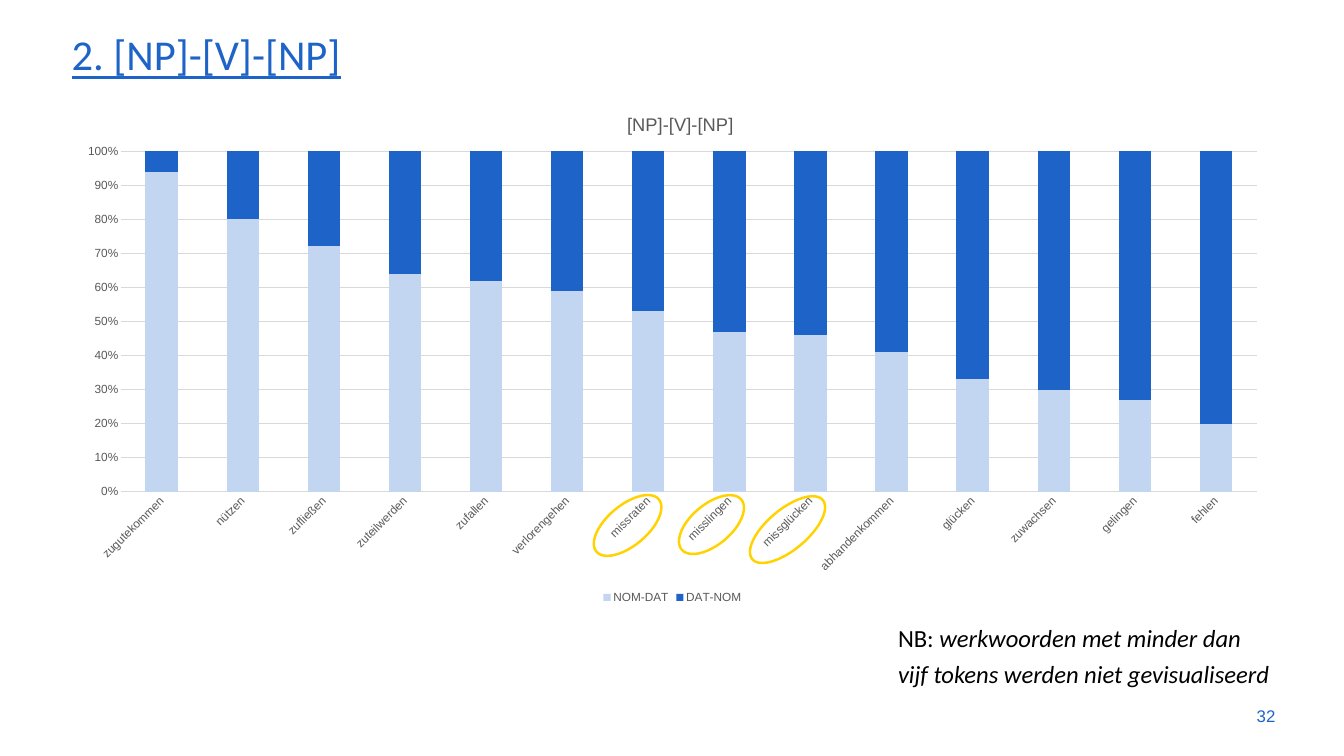
"""Build the slide on case order in the [NP]-[V]-[NP] pattern."""
from dataclasses import dataclass

from lxml.etree import SubElement
from pptx import Presentation
from pptx.chart.data import CategoryChartData
from pptx.dml.color import RGBColor
from pptx.enum.chart import XL_CHART_TYPE as ChartType
from pptx.enum.chart import XL_LEGEND_POSITION as LegendPosition
from pptx.enum.chart import XL_TICK_MARK as TickMark
from pptx.enum.shapes import MSO_SHAPE as Preset
from pptx.enum.text import MSO_ANCHOR as Anchor
from pptx.enum.text import MSO_AUTO_SIZE as AutoSize
from pptx.enum.text import PP_ALIGN as Align
from pptx.oxml import parse_xml
from pptx.oxml.ns import nsdecls, qn
from pptx.util import Cm, Pt


@dataclass(frozen=True)
class Theme:
    blue: RGBColor = RGBColor(0x1E, 0x64, 0xC8)
    pale: RGBColor = RGBColor(0xC2, 0xD5, 0xF1)
    yellow: RGBColor = RGBColor(0xFF, 0xD2, 0x00)
    black: RGBColor = RGBColor(0, 0, 0)
    gray: RGBColor = RGBColor(0x59, 0x59, 0x59)
    grid: RGBColor = RGBColor(0xD9, 0xD9, 0xD9)
    heading: Pt = Pt(54)
    note: Pt = Pt(25)
    chart_title: Pt = Pt(18.6)
    number: Pt = Pt(17.1)
    label: Pt = Pt(12)


theme = Theme()


def style_font(font, color, **values):
    for name, value in values.items():
        setattr(font, name, value)
    font.color.rgb = color


def set_layout(element, **fractions):
    for old in element.findall(qn("c:layout")):
        element.remove(old)
    layout = parse_xml(f"<c:layout {nsdecls('c')}/>")
    manual = SubElement(layout, qn("c:manualLayout"))
    for name, value in fractions.items():
        SubElement(manual, qn(f"c:{name}")).set("val", str(value))
    text = element.find(qn("c:tx"))
    element.insert(0 if text is None else 1, layout)


deck = Presentation()
deck.slide_width, deck.slide_height = Cm(48.16), Cm(27.1)
page = deck.slides.add_slide(deck.slide_layouts[5])

title = page.shapes.title
title.left, title.top, title.width, title.height = Cm(2.31), Cm(0.71), Cm(43.64), Cm(2.39)
frame = title.text_frame
frame.auto_size = AutoSize.NONE
frame.vertical_anchor = Anchor.MIDDLE
para = frame.paragraphs[0]
para.alignment = Align.LEFT
para.line_spacing = 0.9
span = para.add_run()
span.text = "2. [np]-[v]-[np]"
style_font(span.font, theme.blue, name="Calibri", size=theme.heading, underline=True)
span.font._element.set("cap", "small")

nom_dat = {
    "zugutekommen": 94, "nützen": 80, "zufließen": 72, "zuteilwerden": 64,
    "zufallen": 62, "verlorengehen": 59, "missraten": 53, "misslingen": 47,
    "missglücken": 46, "abhandenkommen": 41, "glücken": 33, "zuwachsen": 30,
    "gelingen": 27, "fehlen": 20,
}
data = CategoryChartData()
data.categories = list(nom_dat)
data.add_series("NOM-DAT", list(nom_dat.values()))
data.add_series("DAT-NOM", [100 - share for share in nom_dat.values()])
chart = page.shapes.add_chart(
    ChartType.COLUMN_STACKED_100, Cm(2.29), Cm(3.15), Cm(43.61), Cm(18.59), data
).chart
style_font(chart.font, theme.black, name="Arial", size=Pt(10))

chart.has_title = True
heading = chart.chart_title.text_frame
heading.text = "[NP]-[V]-[NP]"
style_font(heading.paragraphs[0].runs[0].font, theme.gray,
           name="Arial", size=theme.chart_title, bold=False)
chart.chart_title.include_in_layout = False
set_layout(chart.element.xpath(".//c:title")[0], xMode="edge", yMode="edge", x=0.46, y=0.04)
set_layout(chart.element.xpath(".//c:plotArea")[0], layoutTarget="inner",
           xMode="edge", yMode="edge", x=0.047, y=0.122, w=0.933, h=0.657)

plot = chart.plots[0]
plot.gap_width, plot.overlap, plot.vary_by_categories = 150, 100, False
for series, color in zip(plot.series, (theme.pale, theme.blue)):
    series.format.fill.solid()
    series.format.fill.fore_color.rgb = color

chart.has_legend = True
chart.legend.position = LegendPosition.BOTTOM
chart.legend.include_in_layout = False
style_font(chart.legend.font, theme.gray, name="Arial", size=theme.label)

shares, verbs = chart.value_axis, chart.category_axis
for axis in (shares, verbs):
    axis.major_tick_mark = axis.minor_tick_mark = TickMark.NONE
    style_font(axis.tick_labels.font, theme.gray, name="Arial", size=theme.label)
shares.maximum_scale, shares.minimum_scale, shares.major_unit = 1, 0, 0.1
shares.tick_labels.number_format = "0%"
shares.tick_labels.number_format_is_linked = False
shares.format.line.fill.background()
shares.has_major_gridlines = True
for line in (verbs.format.line, shares.major_gridlines.format.line):
    line.color.rgb = theme.grid
    line.width = Pt(0.75)
chart.element.xpath(".//c:catAx/c:txPr/a:bodyPr")[0].set("rot", "-2700000")

box = page.shapes.add_textbox(Cm(43.38), Cm(24.94), Cm(2.57), Cm(1.45))
box.text_frame.vertical_anchor = Anchor.MIDDLE
box.text_frame.word_wrap = True
para = box.text_frame.paragraphs[0]
para.alignment = Align.RIGHT
span = para.add_run()
span.text = "32"
style_font(span.font, theme.blue, name="Arial", size=theme.number)

for left, top, width in ((21.03, 18.11, 2.92), (24.1, 18.08, 2.79), (26.57, 18.26, 3.3)):
    ring = page.shapes.add_shape(Preset.OVAL, Cm(left), Cm(top), Cm(width), Cm(1.45))
    ring.rotation = 320
    ring.shadow.inherit = False
    ring.fill.background()
    ring.line.color.rgb = theme.yellow
    ring.line.width = Pt(2.5)

box = page.shapes.add_textbox(Cm(31.93), Cm(22), Cm(14.02), Cm(2.69))
box.text_frame.word_wrap = True
box.text_frame.auto_size = AutoSize.SHAPE_TO_FIT_TEXT
para = box.text_frame.paragraphs[0]
para.line_spacing = 1.2
note = (("NB: ", False), ("werkwoorden met minder dan vijf tokens werden niet gevisualiseerd", True))
for text, italic in note:
    span = para.add_run()
    span.text = text
    style_font(span.font, theme.black, name="Calibri", size=theme.note, italic=italic)

deck.save("out.pptx")
